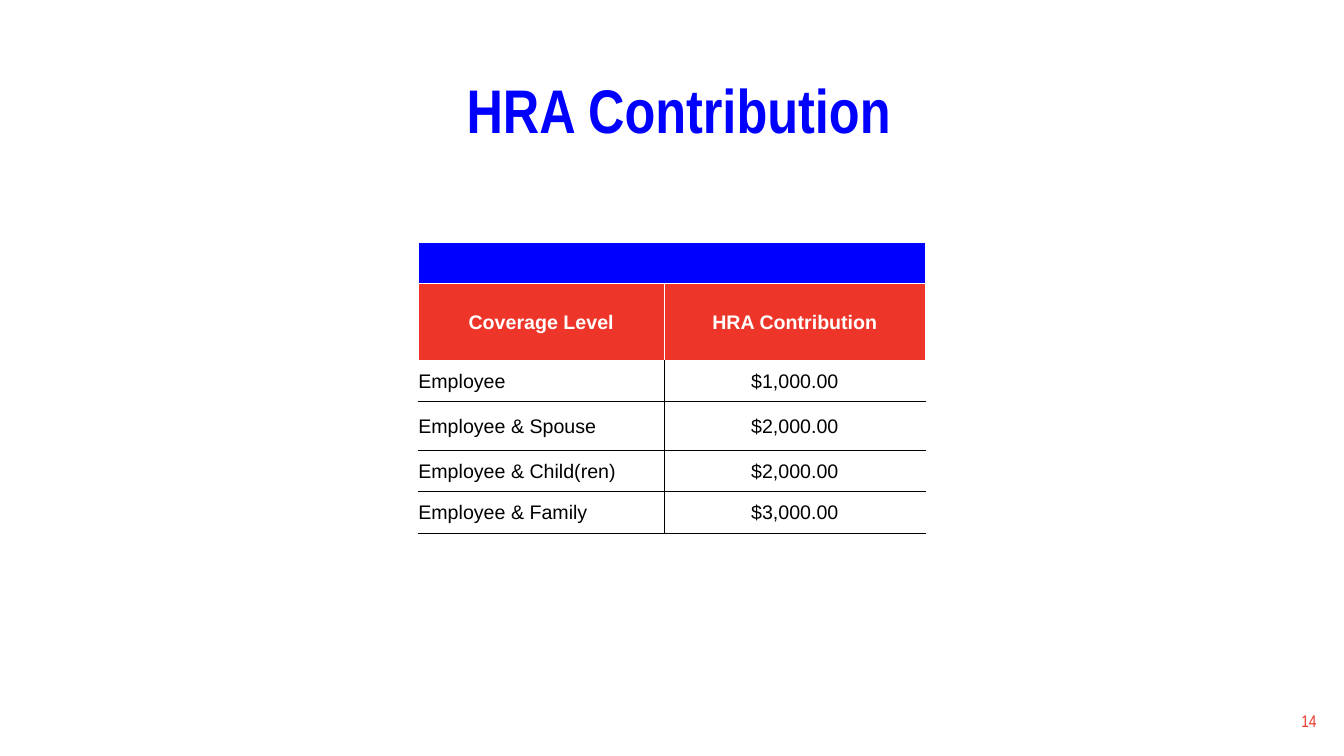
from dataclasses import dataclass
from typing import Optional

from lxml.etree import SubElement as Sub
from pptx import Presentation
from pptx.dml.color import RGBColor as Rgb
from pptx.enum.text import MSO_ANCHOR as Anchor, PP_ALIGN as Align
from pptx.oxml.ns import qn
from pptx.util import Pt


@dataclass(frozen=True)
class Theme:
    blue: str = "0000FF"
    red: str = "EE352A"
    white: str = "FFFFFF"
    black: str = "000000"
    head: str = "Arial Narrow"
    body: str = "Arial"
    big: float = 44
    mid: float = 14
    small: float = 12


@dataclass(frozen=True)
class Style:
    face: str
    size: float
    color: str
    bold: bool = False
    align: Align = Align.CENTER
    lead: float = 1.0


@dataclass(frozen=True)
class Edge:
    color: str
    width: float


@dataclass(frozen=True)
class Row:
    high: float
    texts: tuple[str, ...]


THEME = Theme()
TITLE = Style(THEME.head, THEME.big, THEME.blue, True, lead=0.9)
PAGE = Style(THEME.head, THEME.small, THEME.red, align=Align.RIGHT)
HEAD = Style(THEME.body, THEME.mid, THEME.white, True, lead=1.07)
LEVEL = Style(THEME.body, THEME.mid, THEME.black, align=Align.LEFT, lead=1.07)
MONEY = Style(THEME.body, THEME.mid, THEME.black, lead=1.07)
PALE = Edge(THEME.white, 1)
DARK = Edge(THEME.black, 0.5)

WIDE = (175.6, 186.8)
ROWS = (
    Row(29.5, ("", "")),
    Row(54.8, ("Coverage Level", "HRA Contribution")),
    Row(29.5, ("Employee", "$1,000.00")),
    Row(34.8, ("Employee & Spouse", "$2,000.00")),
    Row(29.5, ("Employee & Child(ren)", "$2,000.00")),
    Row(29.5, ("Employee & Family", "$3,000.00")),
)


def write(frame, text: str, style: Style) -> None:
    frame.text = text
    para = frame.paragraphs[0]
    para.alignment = style.align
    para.line_spacing = style.lead
    para.space_before = Pt(0)
    for run in para.runs:
        font = run.font
        font.name = style.face
        font.size = Pt(style.size)
        font.bold = style.bold
        font.color.rgb = Rgb.from_string(style.color)


def paint(cell, color: Optional[str]) -> None:
    if color is None:
        cell.fill.background()
    else:
        cell.fill.solid()
        cell.fill.fore_color.rgb = Rgb.from_string(color)


def border(cell, edges: dict[str, Optional[Edge]]) -> None:
    props = cell._tc.get_or_add_tcPr()
    for place, side in enumerate("LRTB"):
        edge = edges.get(side)
        line = Sub(props, qn(f"a:ln{side}"))
        props.insert(place, line)
        if edge is None:
            line.set("w", "0")
            Sub(line, qn("a:noFill"))
        else:
            line.set("w", str(Pt(edge.width)))
            fill = Sub(line, qn("a:solidFill"))
            Sub(fill, qn("a:srgbClr")).set("val", edge.color)


def dress(cell, row: int, col: int) -> None:
    cell.vertical_anchor = Anchor.MIDDLE
    cell.margin_left = cell.margin_right = Pt(0)
    cell.margin_top = cell.margin_bottom = Pt(0)
    if row < 2:
        style = HEAD
        paint(cell, (THEME.blue, THEME.red)[row])
        edges = dict.fromkeys("LRTB" if row == 0 else "LRT", PALE)
    else:
        style = (LEVEL, MONEY)[col]
        paint(cell, None)
        edges = {"RL"[col]: DARK, "B": DARK}
        if row > 2:
            edges["T"] = DARK
    write(cell.text_frame, ROWS[row].texts[col], style)
    border(cell, edges)


def add_grid(slide) -> None:
    high = sum(row.high for row in ROWS)
    frame = slide.shapes.add_table(
        len(ROWS), len(WIDE), Pt(298.8), Pt(173.2), Pt(sum(WIDE)), Pt(high))
    grid = frame.table
    grid.first_row = grid.horz_banding = False
    for col, width in zip(grid.columns, WIDE):
        col.width = Pt(width)
    for i, row in enumerate(ROWS):
        grid.rows[i].height = Pt(row.high)
        for j in range(len(WIDE)):
            dress(grid.cell(i, j), i, j)
    grid.cell(0, 0).merge(grid.cell(0, 1))


def add_title(slide) -> None:
    title = slide.shapes.title
    title.left, title.top = Pt(66), Pt(28.8)
    title.width, title.height = Pt(828), Pt(104.4)
    title.text_frame.vertical_anchor = Anchor.MIDDLE
    write(title.text_frame, " HRA Contribution", TITLE)


def add_page(slide) -> None:
    box = slide.shapes.add_textbox(Pt(731.5), Pt(500.4), Pt(216), Pt(28.8))
    box.text_frame.word_wrap = True
    box.text_frame.vertical_anchor = Anchor.MIDDLE
    write(box.text_frame, "14", PAGE)


def main() -> None:
    deck = Presentation()
    deck.slide_width, deck.slide_height = Pt(960), Pt(540)
    slide = deck.slides.add_slide(deck.slide_layouts[5])
    add_page(slide)
    add_title(slide)
    add_grid(slide)
    deck.save("out.pptx")


if __name__ == "__main__":
    main()
